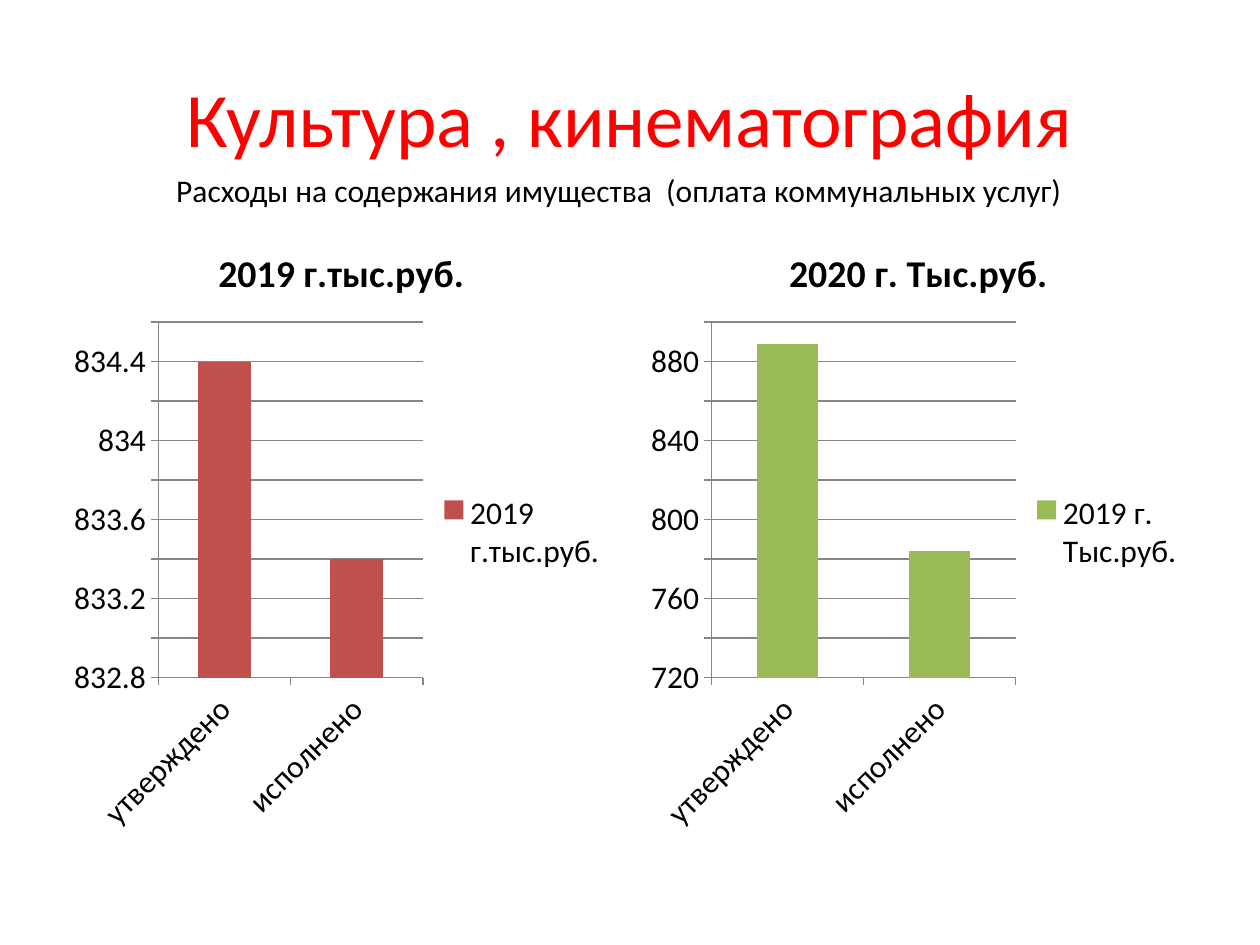
from pptx import Presentation
from pptx.chart.data import CategoryChartData
from pptx.dml.color import RGBColor
from pptx.enum.chart import XL_CHART_TYPE, XL_LEGEND_POSITION, XL_TICK_MARK
from pptx.enum.text import MSO_ANCHOR, PP_ALIGN
from pptx.util import Inches, Pt

FONT = "Calibri"
RED = RGBColor(0xFF, 0x00, 0x00)
BLACK = RGBColor(0x00, 0x00, 0x00)
GREY = RGBColor(0x86, 0x86, 0x86)
BRICK = RGBColor(0xC0, 0x50, 0x4D)
GREEN = RGBColor(0x9B, 0xBB, 0x59)

# Content
TITLE = "Культура , кинематография"
SUBTITLE = "Расходы на содержания имущества  (оплата коммунальных услуг)"
CATEGORIES = ["утверждено", "исполнено"]
CHARTS = [
    {"title": "2019 г.тыс.руб.", "series": "2019 г.тыс.руб.",
     "values": [834.4, 833.4], "scale": (832.8, 834.6, 0.2), "color": BRICK},
    {"title": "2020 г. Тыс.руб.", "series": "2019 г. Тыс.руб.",
     "values": [889, 784], "scale": (720, 900, 20), "color": GREEN},
]

# Layout in inches
MARGIN, CHART_TOP, CHART_WIDTH, CHART_HEIGHT, GAP = 0.5, 1.75, 4.42, 4.95, 0.16


def style_font(font, size, color=BLACK, bold=False):
    font.name, font.size, font.bold = FONT, Pt(size), bold
    font.color.rgb = color


def add_text(page, text, left, top, width, height, size=18, color=BLACK,
             align=PP_ALIGN.LEFT, anchor=MSO_ANCHOR.TOP, wrap=True):
    box = page.shapes.add_textbox(Inches(left), Inches(top), Inches(width), Inches(height))
    frame = box.text_frame
    frame.word_wrap = wrap
    frame.vertical_anchor = anchor
    para = frame.paragraphs[0]
    para.alignment = align
    span = para.add_run()
    span.text = text
    style_font(span.font, size, color)


def add_column_chart(page, content, left):
    data = CategoryChartData()
    data.categories = CATEGORIES
    data.add_series(content["series"], content["values"])
    chart = page.shapes.add_chart(
        XL_CHART_TYPE.COLUMN_STACKED, Inches(left), Inches(CHART_TOP),
        Inches(CHART_WIDTH), Inches(CHART_HEIGHT), data).chart
    style_font(chart.font, 18)

    # Heading and legend
    chart.has_title = True
    heading = chart.chart_title.text_frame
    heading.text = content["title"]
    style_font(heading.paragraphs[0].runs[0].font, 21.6, bold=True)
    chart.has_legend = True
    chart.legend.position = XL_LEGEND_POSITION.RIGHT
    chart.legend.include_in_layout = False

    # Columns
    plot = chart.plots[0]
    plot.gap_width, plot.overlap, plot.vary_by_categories = 150, 100, False
    fill = plot.series[0].format.fill
    fill.solid()
    fill.fore_color.rgb = content["color"]

    # Axes
    values = chart.value_axis
    values.minimum_scale, values.maximum_scale, values.major_unit = content["scale"]
    values.has_major_gridlines = True
    for axis in (chart.category_axis, values):
        axis.major_tick_mark = XL_TICK_MARK.OUTSIDE
    for part in (chart.category_axis, values, values.major_gridlines):
        part.format.line.color.rgb = GREY
        part.format.line.width = Pt(0.75)


deck = Presentation()
deck.slide_width, deck.slide_height = Inches(10), Inches(7.5)
page = deck.slides.add_slide(deck.slide_layouts[6])

add_text(page, TITLE, MARGIN, 0.3, 9, 1.25, size=44, color=RED,
         align=PP_ALIGN.CENTER, anchor=MSO_ANCHOR.MIDDLE)
for index, content in enumerate(CHARTS):
    add_column_chart(page, content, MARGIN + index * (CHART_WIDTH + GAP))
add_text(page, SUBTITLE, 1.3, 1.31, 7.58, 0.4, wrap=False)

deck.save("out.pptx")
